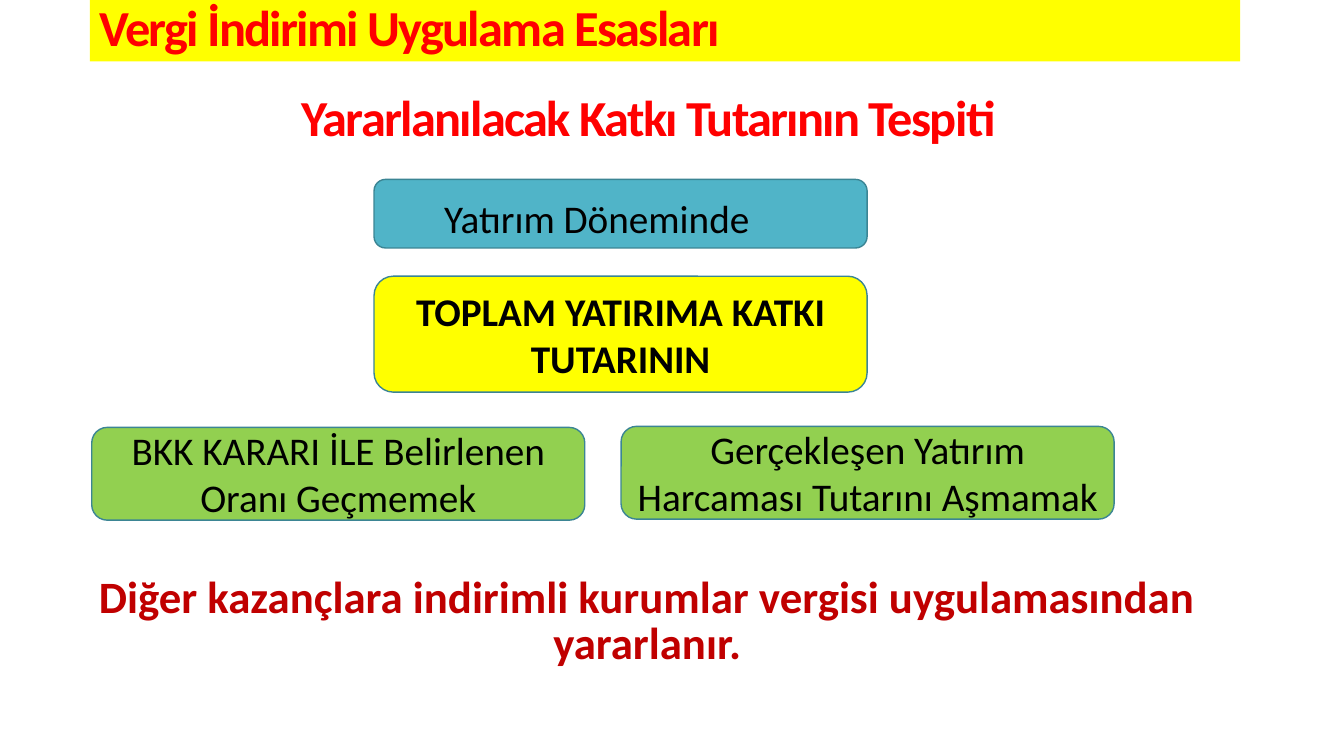
from pptx import Presentation
from pptx.dml.color import RGBColor
from pptx.enum.shapes import MSO_SHAPE as Shape
from pptx.enum.text import MSO_ANCHOR as Anchor, PP_ALIGN as Align
from pptx.util import Inches, Pt

THEME = {
    "font": "Calibri",
    "black": "000000", "red": "FF0000", "dark_red": "C00000",
    "yellow": "FFFF00", "teal": "50B4C8", "green": "92D050", "outline": "3B8594",
    "heading": 36, "conclusion": 32, "box": 28,
}


def rgb(name):
    return RGBColor.from_string(THEME[name])


def write(s, text, size, color, bold=False, align=Align.CENTER, line_spacing=1.0, tracking=0):
    tf = s.text_frame
    tf.word_wrap = True
    tf.vertical_anchor = Anchor.MIDDLE
    p = tf.paragraphs[0]
    p.alignment = align
    p.line_spacing = line_spacing
    r = p.add_run()
    r.text = text
    for name, value in {"name": THEME["font"], "size": Pt(THEME[size]), "bold": bold}.items():
        setattr(r.font, name, value)
    r.font.color.rgb = rgb(color)
    if tracking:
        r._r.get_or_add_rPr().set("spc", str(tracking))
    return tf


prs = Presentation()
prs.slide_width, prs.slide_height = Inches(13.33), Inches(7.5)
slide = prs.slides.add_slide(prs.slide_layouts[6])
sp = slide.shapes

heading = {"size": "heading", "color": "red", "bold": True, "line_spacing": 0.85, "tracking": -120}

title = sp.add_textbox(Inches(0.72), Inches(0.9), Inches(11.41), Inches(0.61))
write(title, "Yararlanılacak Katkı Tutarının Tespiti", **heading)

conclusion = sp.add_textbox(Inches(0.38), Inches(5.7), Inches(12.08), Inches(0.96))
write(conclusion, "Diğer kazançlara indirimli kurumlar vergisi uygulamasından yararlanır.",
      "conclusion", "dark_red", bold=True, line_spacing=0.85)

boxes = [
    ("Yatırım Döneminde", 3.71, 1.78, 0.68, "teal", False, {"margin_right": 0.57, "margin_top": 0.14}),
    ("TOPLAM YATIRIMA KATKI TUTARININ", 3.71, 2.74, 1.15, "yellow", True, {}),
    ("BKK KARARI İLE Belirlenen Oranı Geçmemek", 0.91, 4.24, 0.92, "green", False, {}),
    ("Gerçekleşen Yatırım Harcaması Tutarını Aşmamak", 6.16, 4.23, 0.92, "green", False, {}),
]
for text, left, top, height, fill, bold, margins in boxes:
    s = sp.add_shape(Shape.ROUNDED_RECTANGLE, Inches(left), Inches(top), Inches(4.89), Inches(height))
    s.shadow.inherit = False
    s.fill.solid()
    s.fill.fore_color.rgb = rgb(fill)
    s.line.color.rgb = rgb("outline")
    s.line.width = Pt(1)
    tf = write(s, text, "box", "black", bold=bold)
    for side, value in margins.items():
        setattr(tf, side, Inches(value))

banner = sp.add_shape(Shape.RECTANGLE, Inches(0.89), 0, Inches(11.41), Inches(0.61))
banner.shadow.inherit = False
banner.fill.solid()
banner.fill.fore_color.rgb = rgb("yellow")
banner.line.fill.background()
write(banner, "Vergi İndirimi Uygulama Esasları", align=Align.LEFT, **heading)

prs.save("out.pptx")
